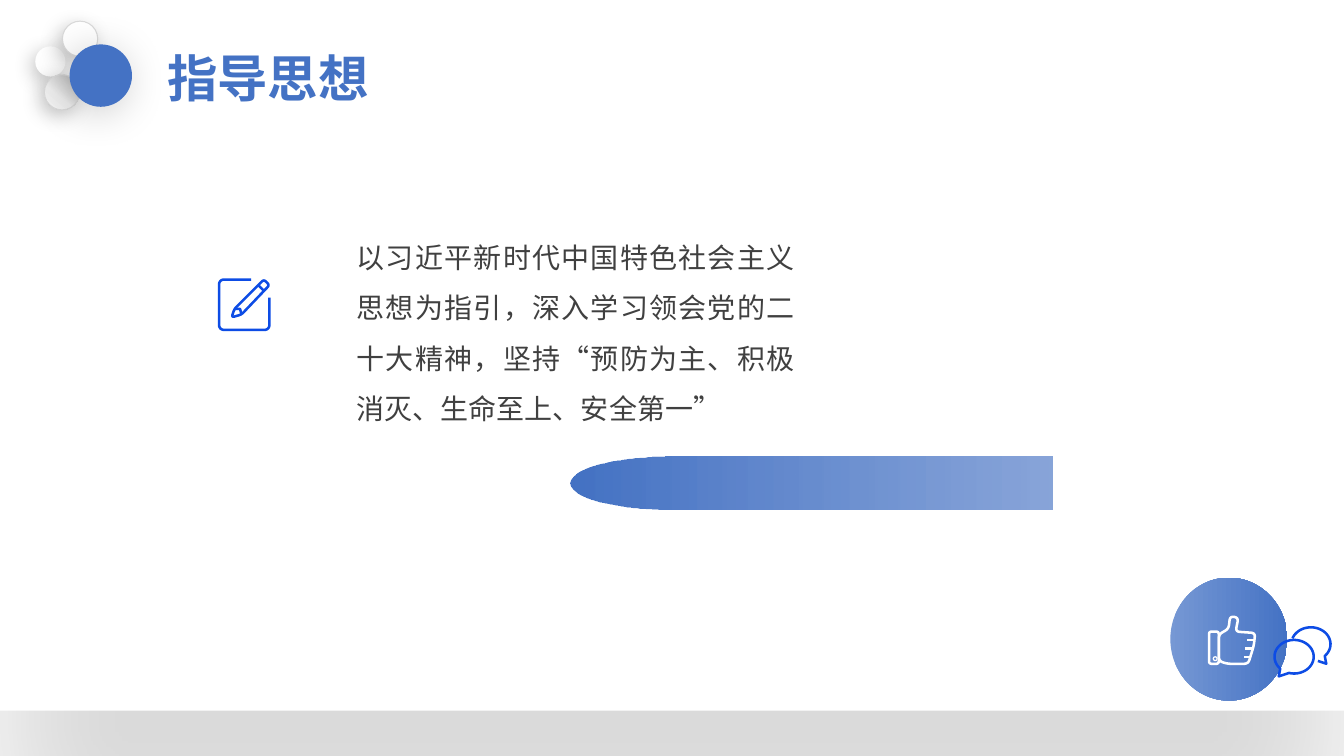
from math import cos, hypot, radians, sin

from lxml import etree
from pptx import Presentation
from pptx.dml.color import RGBColor
from pptx.enum.shapes import MSO_SHAPE
from pptx.enum.text import MSO_AUTO_SIZE, PP_ALIGN
from pptx.oxml.ns import qn
from pptx.util import Pt

ELLIPSE, ROUNDED, DONUT = MSO_SHAPE.OVAL, MSO_SHAPE.ROUNDED_RECTANGLE, MSO_SHAPE.DONUT
FONT = "Noto Sans CJK SC"
BLUE, ICON_BLUE, WHITE, GREY, EDGE = "4472C4", "0D4CE5", "FFFFFF", "404040", "D9D9D9"

# Content
TITLE = "指导思想"
BODY = ("以习近平新时代中国特色社会主义思想为指引，深入学习领会党的二十大精神，"
        "坚持“预防为主、积极消灭、生命至上、安全第一”")

# Shadows: colour, opacity %, blur, distance, angle
PANEL_SHADOW = ("0D0D0D", 15, 100, 108, 90)
SOFT_SHADOW = ("000000", 22, 14, 5, 130)
WIDE_SHADOW = ("000000", 20, 30, 5, 130)

# Gradients: angle, then stops of position %, colour, opacity %
PEARL = (130, [(0, "BFBFBF", 100), (18, "C6C6C6", 100), (61, "EEEEEE", 100), (100, "F5F5F5", 100)])
BADGE = (0, [(0, "7698D4", 100), (100, BLUE, 100)])
FADE = (0, [(0, BLUE, 100), (100, "6A8ED0", 80)])

# Header circles: left, top, diameter, fill, edge, shadow
HEADER_CIRCLES = [
    (25.2, 33.1, 21.6, WHITE, None, SOFT_SHADOW),
    (31.7, 53.3, 25.2, PEARL, EDGE, SOFT_SHADOW),
    (44.6, 15.1, 25.2, WHITE, EDGE, SOFT_SHADOW),
    (49.7, 31.7, 44.6, BLUE, None, WIDE_SHADOW),
]

# Icon corners in points
FRAME = [(24, 1), (1, 1), (1, 37), (37, 37), (37, 14)]
PENCIL = [(10, 28), (12, 22), (33, 1), (37, 5), (17, 26)]
CUFF = [(1, 12), (8, 12), (8, 35), (1, 35)]
HAND = [(8, 14), (15, 10), (16, 1), (22, 2), (20, 12), (34, 13), (33, 22), (29, 35), (14, 35), (8, 33)]


def colour(value):
    return RGBColor.from_string(value)


def add_colour(parent, value, opacity):
    node = etree.SubElement(parent, qn("a:srgbClr"), val=value)
    if opacity < 100:
        etree.SubElement(node, qn("a:alpha"), val=str(opacity * 1000))


def paint(shape, fill, edge=None, shadow=None, weight=0.75):
    shape.shadow.inherit = False
    if fill is None:
        shape.fill.background()
    elif isinstance(fill, str):
        shape.fill.solid()
        shape.fill.fore_color.rgb = colour(fill)
    else:
        angle, stops = fill
        shape.fill.gradient()
        gradient = shape._element.spPr.find(qn("a:gradFill"))
        for child in list(gradient):
            gradient.remove(child)
        stop_list = etree.SubElement(gradient, qn("a:gsLst"))
        for position, value, opacity in stops:
            stop = etree.SubElement(stop_list, qn("a:gs"), pos=str(position * 1000))
            add_colour(stop, value, opacity)
        etree.SubElement(gradient, qn("a:lin"), ang=str(angle * 60000), scaled="0")
    if edge:
        shape.line.color.rgb = colour(edge)
        shape.line.width = Pt(weight)
    else:
        shape.line.fill.background()
    if shadow:
        value, opacity, blur, distance, angle = shadow
        effects = shape._element.spPr.find(qn("a:effectLst"))
        outer = etree.SubElement(effects, qn("a:outerShdw"), blurRad=str(Pt(blur)),
                                 dist=str(Pt(distance)), dir=str(angle * 60000),
                                 algn="ctr", rotWithShape="0")
        add_colour(outer, value, opacity)


def add_preset(owner, kind, left, top, width, height, fill, edge=None, shadow=None):
    shape = owner.shapes.add_shape(kind, Pt(left), Pt(top), Pt(width), Pt(height))
    paint(shape, fill, edge, shadow)
    return shape


def arc(x, y, across, down, start, end, steps=48):
    angles = [radians(start + (end - start) * step / steps) for step in range(steps + 1)]
    return [(x + across * cos(angle), y + down * sin(angle)) for angle in angles]


def soften(corners, radius, closed):
    """Round each corner with a short quadratic curve."""
    points = []
    for index, (x, y) in enumerate(corners):
        if not closed and index in (0, len(corners) - 1):
            points.append((x, y))
            continue
        ends = []
        for nx, ny in (corners[index - 1], corners[(index + 1) % len(corners)]):
            share = min(0.5, radius / hypot(nx - x, ny - y))
            ends.append((x + (nx - x) * share, y + (ny - y) * share))
        (ax, ay), (bx, by) = ends
        for step in range(7):
            t = step / 6
            a, b, c = (1 - t) ** 2, 2 * t * (1 - t), t * t
            points.append((a * ax + b * x + c * bx, a * ay + b * y + c * by))
    return points


def add_outline(owner, contours, left, top, fill=None, edge=None):
    """Draw contours given as (points, closed)."""
    builder = None
    for points, closed in contours:
        spots = [(Pt(x), Pt(y)) for x, y in points]
        if builder is None:
            builder = owner.shapes.build_freeform(*spots[0])
        else:
            builder.move_to(*spots[0])
        builder.add_line_segments(spots[1:], close=closed)
    paint(builder.convert_to_shape(Pt(left), Pt(top)), fill, edge, weight=1.8)


def add_text(owner, text, left, top, width, height, size, value, wrap):
    box = owner.shapes.add_textbox(Pt(left), Pt(top), Pt(width), Pt(height))
    box.text_frame.word_wrap = wrap
    box.text_frame.auto_size = MSO_AUTO_SIZE.SHAPE_TO_FIT_TEXT
    para = box.text_frame.paragraphs[0]
    span = para.add_run()
    span.text = text
    para.font.size, para.font.name, para.font.color.rgb = Pt(size), FONT, colour(value)
    etree.SubElement(span.font._element, qn("a:ea"), typeface=FONT)
    return para


deck = Presentation()
deck.slide_width, deck.slide_height = Pt(960), Pt(540)
page = deck.slides.add_slide(deck.slide_layouts[6])

# White panel with the shade along the bottom edge
panel = add_preset(page, ROUNDED, 0, 116, 960, 391.7, WHITE, shadow=PANEL_SHADOW)
panel.adjustments[0] = 0

# Header
header = page.shapes.add_group_shape()
for left, top, size, fill, edge, shadow in HEADER_CIRCLES:
    add_preset(header, ELLIPSE, left, top, size, size, fill, edge, shadow)
title = add_text(header, TITLE, 112.3, 30.2, 159.1, 51.1, 36, BLUE, False)
title.font.bold = True

# Thumb badge with finger lines
badge = page.shapes.add_group_shape()
add_preset(badge, ELLIPSE, 836, 412.6, 83.5, 87.8, BADGE)
fingers = [([(28 - row, 18 + 6 * row), (33 - row, 18 + 6 * row)], False) for row in range(3)]
add_outline(badge, [(soften(CUFF, 2, True), True), (soften(HAND, 3, True), True)] + fingers,
            862.6, 439.2, edge=WHITE)
add_preset(badge, DONUT, 866.2, 468.7, 3.6, 3.6, WHITE)

# Body text
body = add_text(page, BODY, 247.7, 156.2, 326.9, 152.6, 20, GREY, True)
body.alignment, body.line_spacing = PP_ALIGN.JUSTIFY, 1.5

# Pencil, speech bubbles and ribbon
nib = [(12, 22), (16, 22), (17, 26)]
add_outline(page, [(soften(FRAME, 4, False), False), (soften(PENCIL, 2, True), True),
                   (nib, False), ([(29, 5), (33, 9)], False)], 155.5, 198.7, edge=ICON_BLUE)
front = arc(15, 22, 14, 12, 135, 465) + [(4, 36)]
back = arc(27, 13, 14, 12, 200, 405) + [(38, 27), (32, 25)]
add_outline(page, [(back, False), (front, True)], 909.4, 447.1, edge=ICON_BLUE)
ribbon = arc(72.5, 19, 72.5, 19, 90, 270) + [(344.5, 0), (344.5, 38)]
add_outline(page, [(ribbon, True)], 407.5, 326.2, FADE)

deck.save("out.pptx")
